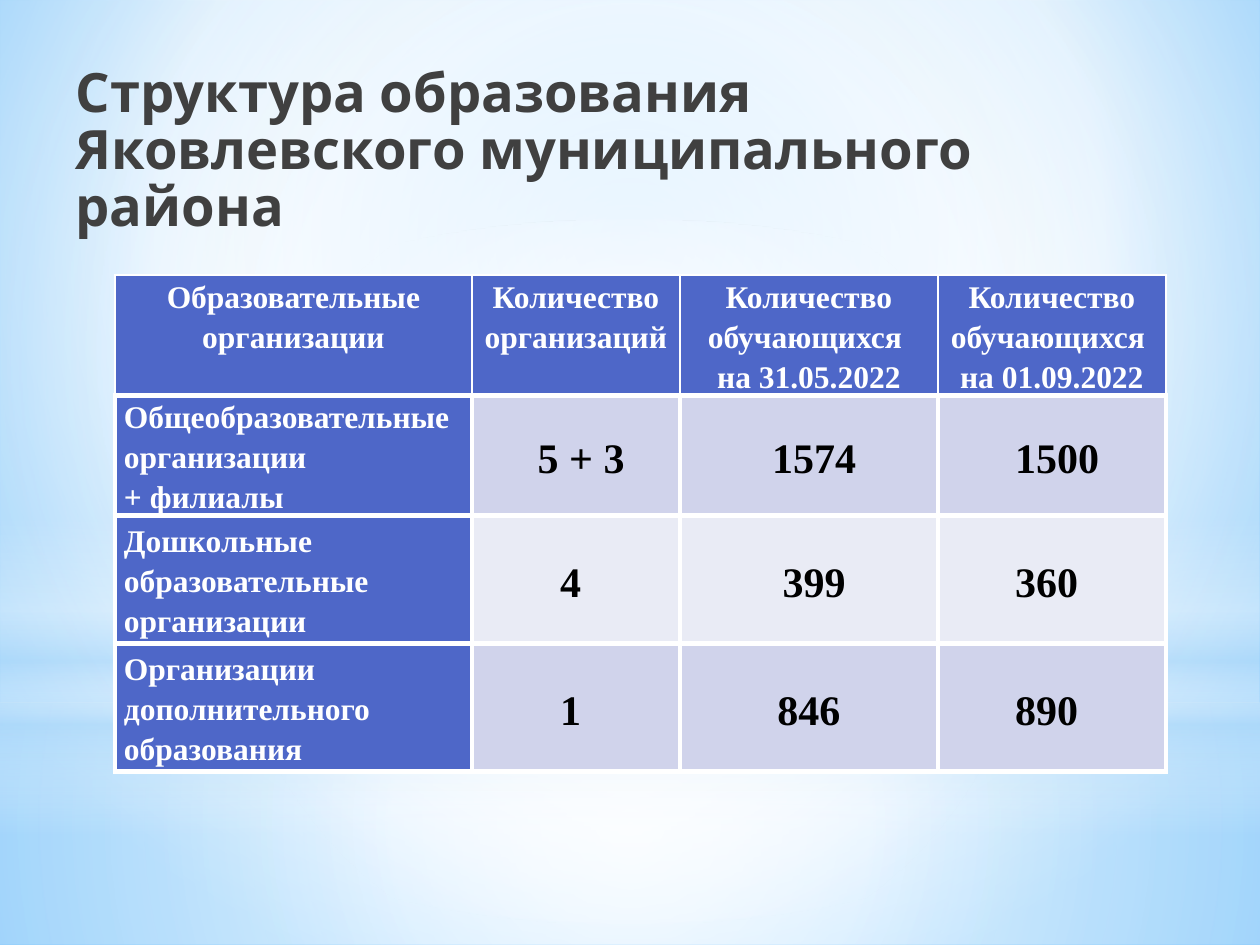
from lxml.etree import SubElement
from pptx import Presentation
from pptx.dml.color import RGBColor
from pptx.enum.shapes import MSO_SHAPE
from pptx.enum.text import MSO_ANCHOR, PP_ALIGN
from pptx.oxml.ns import qn
from pptx.util import Emu, Pt

BLUE, PALE, LIGHT = "4E67C8", "D0D3EB", "E9EBF5"
WHITE, BLACK, GREY, SKY = "FFFFFF", "000000", "404040", "B4DCFA"
MID = (50, 50, 50, 50)

HEAD = ["Образовательные организации", "Количество организаций",
        "Количество обучающихся \nна 31.05.2022",
        "Количество обучающихся \nна 01.09.2022"]
ROWS = [
    ["Общеобразовательные организации\n+ филиалы", " 5 + 3", " 1574", " 1500"],
    ["Дошкольные образовательные организации", "4 ", " 399", "360 "],
    ["Организации дополнительного образования", "1 ", "846", "890 "],
]


def px(n):
    return Emu(round(n * 914400 / 126))


def rgb(text):
    return RGBColor.from_string(text)


def blend(fill, root, stops, to=None):
    """Fill with (percent, colour, opacity) stops: round if to is given, else downward."""
    fill.gradient()
    grad = next(root.iter(qn("a:gradFill")))
    grad.clear()
    grad.set("rotWithShape", "1")
    group = SubElement(grad, qn("a:gsLst"))
    for pos, tone, alpha in stops:
        stop = SubElement(group, qn("a:gs"), pos=str(pos * 1000))
        color = SubElement(stop, qn("a:srgbClr"), val=tone)
        if alpha < 100:
            SubElement(color, qn("a:alpha"), val=str(alpha * 1000))
    if to:
        ring = SubElement(grad, qn("a:path"), path="circle")
        sides = {side: str(n * 1000) for side, n in zip("ltrb", to)}
        SubElement(ring, qn("a:fillToRect"), **sides)
    else:
        SubElement(grad, qn("a:lin"), ang="5400000", scaled="0")


class Deck:
    serif, sans = "Times New Roman", "Karla"

    def __init__(self):
        self.prs = Presentation()
        self.prs.slide_width, self.prs.slide_height = px(1260), px(945)
        self.slide = self.prs.slides.add_slide(self.prs.slide_layouts[5])

    def back(self, stops, to):
        blend(self.slide.background.fill, self.slide.element, stops, to)

    def glow(self, kind, top, height, stops, to=None):
        shape = self.slide.shapes.add_shape(kind, 0, px(top), px(1260), px(height))
        shape.shadow.inherit = False
        shape.line.fill.background()
        blend(shape.fill, shape.element, stops, to)

    def run(self, para, text, size, color, font):
        run = para.add_run()
        run.text = text
        run.font.size, run.font.name, run.font.bold = Pt(size), font, True
        run.font.color.rgb = rgb(color)

    def title(self, lines, box):
        title = self.slide.shapes.title
        title.left, title.top, title.width, title.height = map(px, box)
        self.slide.shapes.element.append(title.element)  # bring to front
        frame = title.text_frame
        frame.word_wrap, frame.vertical_anchor = True, MSO_ANCHOR.TOP
        para = frame.paragraphs[0]
        para.alignment, para.line_spacing = PP_ALIGN.LEFT, 0.88
        for i, line in enumerate(lines):
            if i:
                para.add_line_break()
            self.run(para, line, 31, GREY, self.sans)

    def edge(self, cell, widths):
        """Draw white borders: left, right, top, bottom, in points."""
        props = cell._tc.get_or_add_tcPr()
        for side, width in zip("LRTB", widths):
            line = SubElement(props, qn("a:ln" + side), w=str(Pt(width)))
            fill = SubElement(line, qn("a:solidFill"))
            SubElement(fill, qn("a:srgbClr"), val=WHITE)

    def cell(self, cell, text, fill, size, color, align, anchor):
        cell.margin_left = cell.margin_right = px(9)
        cell.margin_top = cell.margin_bottom = 0
        cell.vertical_anchor = anchor
        cell.fill.solid()
        cell.fill.fore_color.rgb = rgb(fill)
        frame = cell.text_frame
        for i, line in enumerate(text.split("\n")):
            para = frame.add_paragraph() if i else frame.paragraphs[0]
            para.alignment, para.line_spacing = align, 1.15
            self.run(para, line, size, color, self.serif)

    def table(self, left, top, cols, rows, data):
        table = self.slide.shapes.add_table(
            len(rows), len(cols), px(left), px(top), px(sum(cols)), px(sum(rows))).table
        for col, width in zip(table.columns, cols):
            col.width = px(width)
        for row, height in zip(table.rows, rows):
            row.height = px(height)
        for r, line in enumerate(data):
            for c, text in enumerate(line):
                cell = table.cell(r, c)
                self.edge(cell, (3, 3, 3, 3) if r else (1, 1, 1, 3))
                label = r == 0 or c == 0
                fill = BLUE if label else PALE if r % 2 else LIGHT
                size, color = (18, WHITE) if label else (24, BLACK)
                align = PP_ALIGN.LEFT if r and c == 0 else PP_ALIGN.CENTER
                anchor = MSO_ANCHOR.MIDDLE if r else MSO_ANCHOR.TOP
                self.cell(cell, text, fill, size, color, align, anchor)


def main():
    deck = Deck()
    deck.back([(0, "9ED5FF", 100), (60, WHITE, 100), (100, "5BB9FF", 100)],
              (20, 10, 20, 60))
    rect = MSO_SHAPE.RECTANGLE
    deck.glow(rect, 703, 242, [(0, WHITE, 91), (37, WHITE, 76), (100, SKY, 79)], MID)
    deck.glow(rect, 0, 703, [(0, WHITE, 89), (48, WHITE, 62), (100, SKY, 79)], MID)
    deck.glow(rect, 519, 315, [(0, WHITE, 0), (29, WHITE, 30), (45, SKY, 40),
                               (55, WHITE, 26), (65, SKY, 60), (100, WHITE, 0)])
    deck.glow(MSO_SHAPE.OVAL, 220, 703, [(0, WHITE, 100), (56, WHITE, 0)], MID)
    deck.title(["Структура образования ", "Яковлевского муниципального района"],
               (63, 60, 1134, 149))
    deck.table(115, 275, [357, 208, 258, 228], [119, 119, 128, 128], [HEAD] + ROWS)
    deck.prs.save("out.pptx")


if __name__ == "__main__":
    main()
